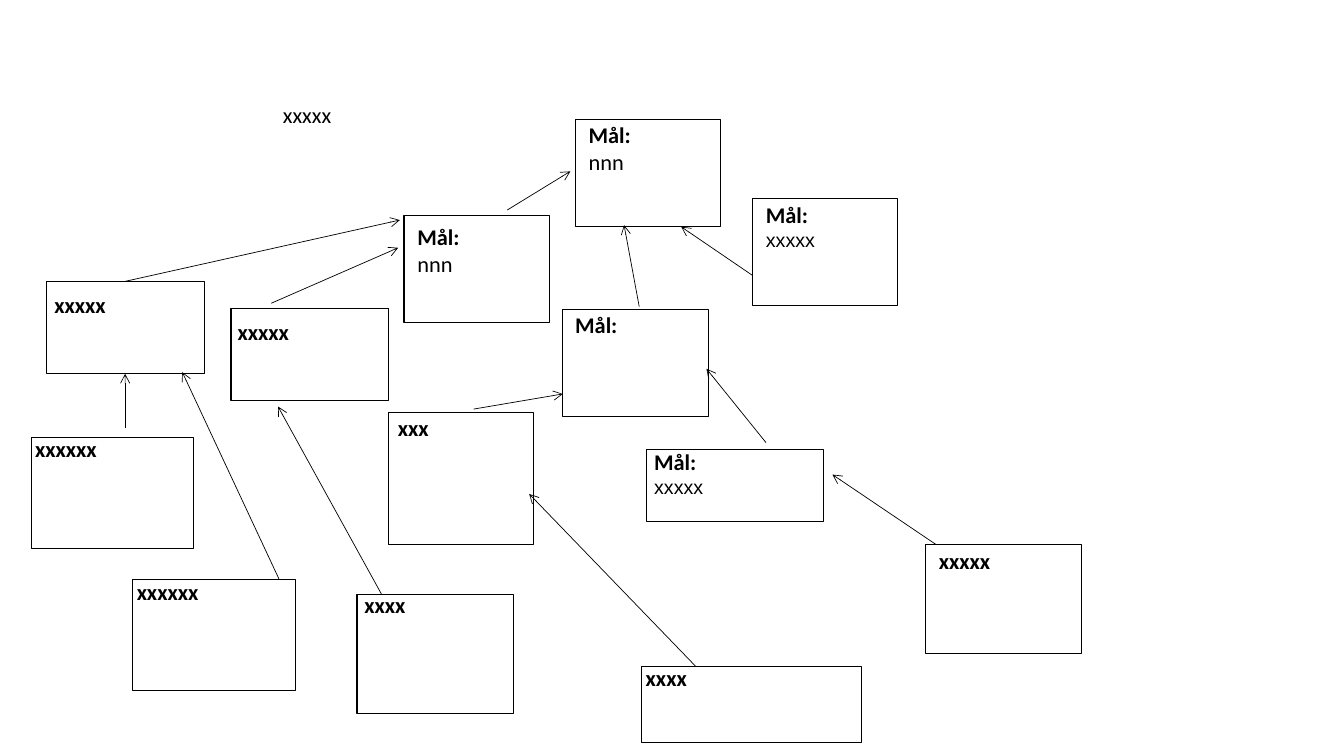
from dataclasses import dataclass
from typing import NamedTuple, Optional

from lxml.etree import SubElement
from pptx import Presentation
from pptx.dml.color import RGBColor
from pptx.enum.shapes import MSO_CONNECTOR, MSO_SHAPE
from pptx.enum.text import MSO_AUTO_SIZE
from pptx.oxml.ns import qn
from pptx.util import Emu, Inches, Pt

BLACK = RGBColor(0x00, 0x00, 0x00)
WHITE = RGBColor(0xFF, 0xFF, 0xFF)

# The slide is a grid of 160 columns by 90 rows.
COLUMNS, ROWS = 160, 90
SLIDE_WIDTH, SLIDE_HEIGHT = Inches(13.3333), Inches(7.5)
TOP, BOTTOM = 0, 2


class Line(NamedTuple):
    text: str
    bold: bool = True
    size: int = 16
    font: str = "Calibri"


class Area(NamedTuple):
    column: float
    row: float
    columns: float
    rows: float


@dataclass
class Goal:
    """A framed box; its label starts at an offset from the frame's corner."""
    frame: Area
    label_offset: tuple[float, float]
    label_columns: float
    lines: list[Line]


@dataclass
class Arrow:
    start: tuple[float, float]
    end: tuple[float, float]
    from_top_of: Optional[str] = None
    to_bottom_of: Optional[str] = None


HEADING = Line("Mål:")
COUNT = Line("nnn", bold=False)
DETAIL = Line("xxxxx", bold=False, size=14, font="Arial")

GOALS = {
    "main": Goal(Area(68.5, 14.2, 17.3, 12.8), (0.4, -0.4), 17.6, [HEADING, COUNT]),
    "right": Goal(Area(89.6, 23.6, 17.3, 12.8), (0.4, -0.3), 17.6, [HEADING, DETAIL]),
    "left": Goal(Area(48.1, 25.6, 17.3, 12.8), (0.4, 0.4), 17.6, [HEADING, COUNT]),
    "centre": Goal(Area(46.2, 49.1, 17.3, 15.7), (0, -0.4), 20.5, [Line("xxx")]),
    "middle": Goal(Area(67, 36.8, 17.3, 12.8), (0.3, -0.3), 17.6, [HEADING]),
    "low left": Goal(Area(42.5, 70.8, 18.6, 14.2), (-0.3, -1), 20.5, [Line("xxxx")]),
    "far right": Goal(Area(110.2, 64.8, 18.6, 13), (0.4, -0.2), 20.5, [Line("xxxxx")]),
    "low middle": Goal(Area(77, 53.5, 21.1, 8.6), (-0.3, -0.7), 22.3, [HEADING, DETAIL]),
    "far left": Goal(Area(3.7, 52.1, 19.4, 13.2), (-0.7, -0.9), 22.4, [Line("xxxxxx")]),
    "first": Goal(Area(5.5, 33.5, 18.8, 11), (-0.2, 0.6), 22.4, [Line("xxxxx")]),
    "bottom": Goal(Area(76.4, 79.3, 26.2, 9.1), (-0.7, -0.8), 28.1, [Line("xxxx")]),
    "second": Goal(Area(27.5, 36.7, 18.8, 11), (-0.4, 0.6), 22.4, [Line("xxxxx")]),
    "bottom left": Goal(Area(15.8, 69, 19.4, 13.2), (-0.7, -0.8), 22.4, [Line("xxxxxx")]),
}

ARROWS = [
    Arrow((60.4, 25), (67.9, 20.4)),
    Arrow((89.6, 32.8), (81.1, 27)),
    Arrow((76.1, 36.5), (74.3, 26.8)),
    Arrow((56.4, 48.7), (67, 46.9)),
    Arrow((111.4, 64.8), (99.1, 56.5)),
    Arrow((45.4, 70.7), (33.1, 48.4)),
    Arrow((91.2, 52.7), (84.1, 43.9)),
    Arrow((14.9, 51), (14.9, 44.5), to_bottom_of="first"),
    Arrow((14.9, 33.5), (47.6, 26.2), from_top_of="first"),
    Arrow((82.8, 79.3), (63, 58.8)),
    Arrow((32.3, 36.1), (47.4, 29.5)),
    Arrow((33.2, 68.9), (21.7, 44.3)),
]


def across(columns: float) -> Emu:
    return Emu(round(SLIDE_WIDTH * columns / COLUMNS))


def down(rows: float) -> Emu:
    return Emu(round(SLIDE_HEIGHT * rows / ROWS))


def place(area: Area) -> tuple[Emu, Emu, Emu, Emu]:
    return across(area.column), down(area.row), across(area.columns), down(area.rows)


def add_label(slide, area: Area, lines: list[Line]) -> None:
    label = slide.shapes.add_textbox(*place(area)).text_frame
    label.word_wrap = True
    label.auto_size = MSO_AUTO_SIZE.SHAPE_TO_FIT_TEXT
    for index, line in enumerate(lines):
        paragraph = label.add_paragraph() if index else label.paragraphs[0]
        run = paragraph.add_run()
        run.text = line.text
        run.font.name = line.font
        run.font.size = Pt(line.size)
        run.font.bold = line.bold
        run.font.color.rgb = BLACK


def add_goal(slide, goal: Goal):
    frame = slide.shapes.add_shape(MSO_SHAPE.RECTANGLE, *place(goal.frame))
    frame.shadow.inherit = False
    frame.fill.solid()
    frame.fill.fore_color.rgb = WHITE
    frame.line.color.rgb = BLACK
    frame.line.width = Pt(0.75)
    label_area = Area(goal.frame.column + goal.label_offset[0],
                      goal.frame.row + goal.label_offset[1],
                      goal.label_columns,
                      1.2 + 3.2 * len(goal.lines))
    add_label(slide, label_area, goal.lines)
    return frame


def add_arrow(slide, arrow: Arrow, frames: dict) -> None:
    link = slide.shapes.add_connector(
        MSO_CONNECTOR.STRAIGHT,
        across(arrow.start[0]), down(arrow.start[1]),
        across(arrow.end[0]), down(arrow.end[1]))
    if arrow.from_top_of:
        link.begin_connect(frames[arrow.from_top_of], TOP)
    if arrow.to_bottom_of:
        link.end_connect(frames[arrow.to_bottom_of], BOTTOM)
    link.line.color.rgb = BLACK
    link.line.width = Pt(0.5)
    SubElement(link.line._get_or_add_ln(), qn("a:tailEnd"), type="arrow")
    SubElement(link._element.spPr, qn("a:effectLst"))


def main() -> None:
    presentation = Presentation()
    presentation.slide_width = SLIDE_WIDTH
    presentation.slide_height = SLIDE_HEIGHT
    slide = presentation.slides.add_slide(presentation.slide_layouts[6])
    frames = {name: add_goal(slide, goal) for name, goal in GOALS.items()}
    for arrow in ARROWS:
        add_arrow(slide, arrow, frames)
    add_label(slide, Area(32.5, 11.4, 22.6, 4.4), [Line("xxxxx", bold=False)])
    presentation.save("out.pptx")


if __name__ == "__main__":
    main()
